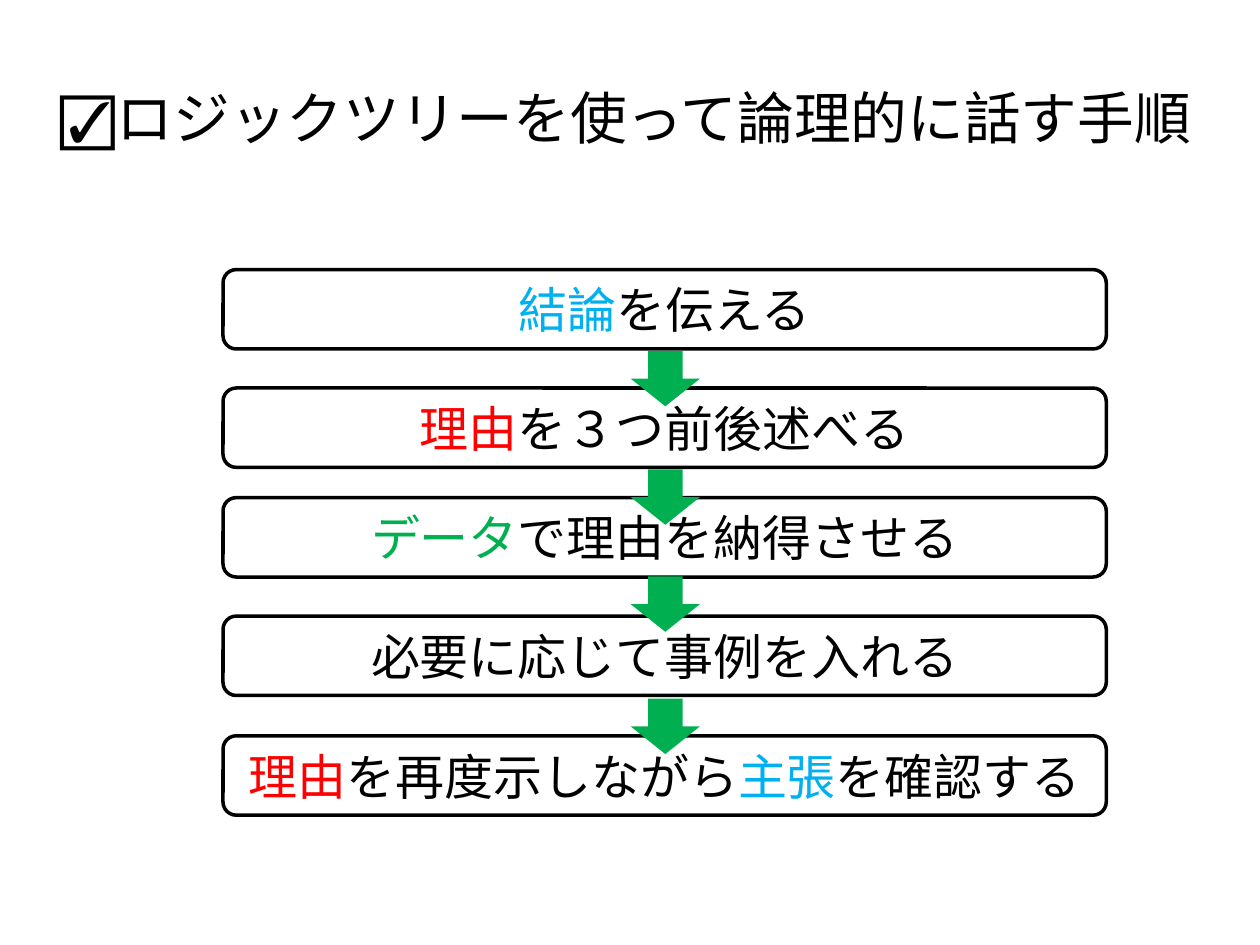
from dataclasses import dataclass
from typing import Optional

from lxml.etree import SubElement
from pptx import Presentation
from pptx.dml.color import RGBColor
from pptx.enum.shapes import MSO_SHAPE
from pptx.enum.text import MSO_ANCHOR, PP_ALIGN
from pptx.oxml.ns import qn
from pptx.util import Inches, Pt

FONT = "Noto Sans CJK JP"
COLOURS = {
    "black": "000000",
    "blue": "00B0F0",
    "red": "FF0000",
    "green": "00B050",
}
STEP_LEFT, STEP_WIDTH, STEP_HEIGHT = 1.77, 7.01, 0.63
ARROW_LENGTH, ARROW_BREADTH = 0.44, 0.55
ARROW_LEFT = 5.06


@dataclass(frozen=True)
class Step:
    top: float
    spans: tuple[tuple[str, str], ...]
    arrow_top: Optional[float] = None


STEPS = (
    Step(2.14, (("結論", "blue"), ("を伝える", "black")), 2.73),
    Step(3.08, (("理由", "red"), ("を３つ前後述べる", "black")), 3.67),
    Step(3.95, (("データ", "green"), ("で理由を納得させる", "black")), 4.52),
    Step(4.89, (("必要に応じて事例を入れる", "black"),), 5.49),
    Step(5.84, (
        ("理由", "red"),
        ("を再度示しながら", "black"),
        ("主張", "blue"),
        ("を確認する", "black"),
    )),
)


def colour(name: str) -> RGBColor:
    return RGBColor.from_string(COLOURS[name])


def add_span(para, text: str, *, size: float, shade: str = "black") -> None:
    span = para.add_run()
    span.text = text
    span.font.size = Pt(size)
    span.font.name = FONT
    span.font.color.rgb = colour(shade)
    SubElement(span.font._element, qn("a:ea")).set("typeface", FONT)


def centred_paragraph(box):
    frame = box.text_frame
    frame.word_wrap = True
    frame.vertical_anchor = MSO_ANCHOR.MIDDLE
    para = frame.paragraphs[0]
    para.alignment = PP_ALIGN.CENTER
    return para


def draw_title(page, text: str) -> None:
    box = page.shapes.add_textbox(Inches(0.2), Inches(0.3), Inches(9.53), Inches(1.25))
    add_span(centred_paragraph(box), text, size=32.4)


def draw_step(page, step: Step) -> None:
    box = page.shapes.add_shape(
        MSO_SHAPE.ROUNDED_RECTANGLE,
        Inches(STEP_LEFT), Inches(step.top), Inches(STEP_WIDTH), Inches(STEP_HEIGHT),
    )
    box.shadow.inherit = False
    box.fill.background()
    box.line.color.rgb = colour("black")
    box.line.width = Pt(2)
    para = centred_paragraph(box)
    for text, shade in step.spans:
        add_span(para, text, size=28, shade=shade)


def draw_arrow(page, top: float) -> None:
    arrow = page.shapes.add_shape(
        MSO_SHAPE.RIGHT_ARROW,
        Inches(ARROW_LEFT), Inches(top), Inches(ARROW_LENGTH), Inches(ARROW_BREADTH),
    )
    arrow.rotation = 90
    arrow.shadow.inherit = False
    arrow.fill.solid()
    arrow.fill.fore_color.rgb = colour("green")
    arrow.line.fill.background()


def main() -> None:
    deck = Presentation()
    deck.slide_width, deck.slide_height = Inches(10), Inches(7.5)
    page = deck.slides.add_slide(deck.slide_layouts[6])
    draw_title(page, "☑ロジックツリーを使って論理的に話す手順")
    for step in STEPS:
        draw_step(page, step)
    for step in STEPS:
        if step.arrow_top is not None:
            draw_arrow(page, step.arrow_top)
    deck.save("out.pptx")


if __name__ == "__main__":
    main()
